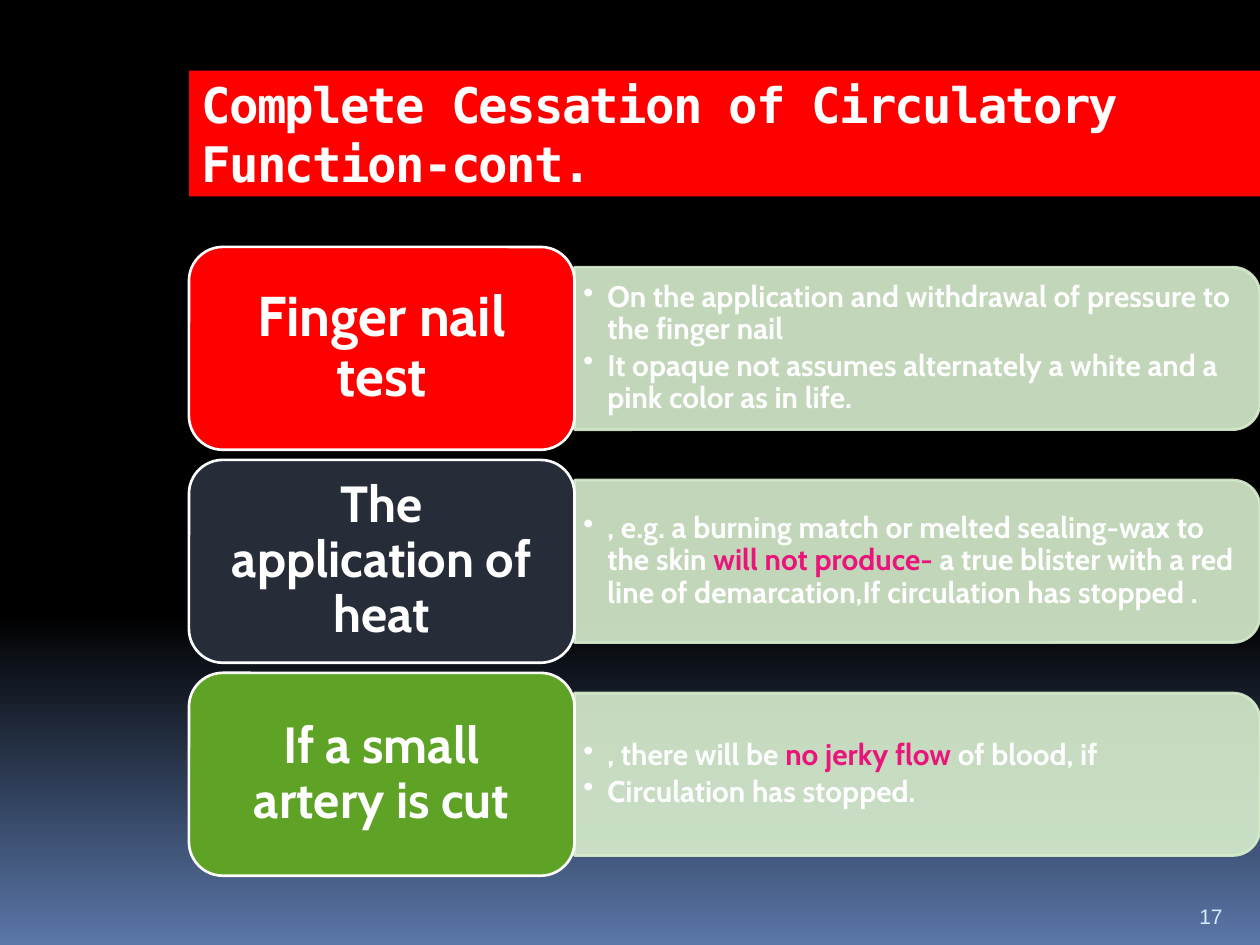
from dataclasses import dataclass

from lxml import etree
from pptx import Presentation
from pptx.dml.color import RGBColor
from pptx.enum import shapes, text
from pptx.oxml.ns import qn
from pptx.util import Inches, Pt


@dataclass(frozen=True)
class Theme:
    black: str = "000000"
    dusk: str = "5A77A9"
    white: str = "FFFFFF"
    red: str = "FF0000"
    slate: str = "272D38"
    green: str = "5FA326"
    mint: str = "D8EECE"
    pink: str = "EA157A"
    ice: str = "D6ECFF"
    title_font: str = "DejaVu Sans Mono"
    body_font: str = "Cabin"
    number_font: str = "Arial"
    title_size: int = 28
    detail_size: int = 17
    number_size: int = 12


@dataclass(frozen=True)
class Phrase:
    words: str
    stressed: bool = False


@dataclass(frozen=True)
class Sign:
    name: str
    color: str
    size: int
    points: tuple[tuple[Phrase, ...], ...]


THEME = Theme()
LEFT, RIGHT = 1.5, 10
CARD_TOP, CARD_WIDTH, CARD_HEIGHT, PITCH = 1.96, 3.06, 1.61, 1.69
BAR_HEIGHT, DETAIL_HEIGHT, DETAIL_WIDTH = 1.29, 1.16, 5.38

SIGNS = (
    Sign("Finger nail test", THEME.red, 32, (
        (Phrase("On the application and withdrawal of pressure to the finger nail"),),
        (Phrase("It opaque not assumes alternately a white and a pink color as in life."),),
    )),
    Sign("The application of heat", THEME.slate, 29, (
        (Phrase(", e.g. a burning match or melted sealing-wax to the skin "),
         Phrase("will not produce- ", True),
         Phrase("a true blister with a red line of demarcation,If circulation has stopped .")),
    )),
    Sign("If a small artery is cut", THEME.green, 29, (
        (Phrase(", there will be "), Phrase("no jerky flow ", True), Phrase("of blood, if")),
        (Phrase("Circulation has stopped."),),
    )),
)


def rgb(color: str) -> RGBColor:
    return RGBColor.from_string(color)


def style(run, font: str, size: int, color: str, bold: bool = True) -> None:
    run.font.name = font
    run.font.size = Pt(size)
    run.font.bold = bold
    run.font.color.rgb = rgb(color)


def set_frame(frame, anchor, across: float, down: float) -> None:
    frame.word_wrap = True
    frame.auto_size = text.MSO_AUTO_SIZE.NONE
    frame.vertical_anchor = anchor
    frame.margin_left = frame.margin_right = Inches(across)
    frame.margin_top = frame.margin_bottom = Inches(down)


def paint(shape, fill: str, line: str) -> None:
    shape.shadow.inherit = False
    shape.fill.solid()
    shape.fill.fore_color.rgb = rgb(fill)
    shape.line.color.rgb = rgb(line)
    shape.line.width = Pt(1.5)


def add_bar(slide, middle: float) -> None:
    length = RIGHT - LEFT - CARD_WIDTH
    center = RIGHT - length / 2
    bar = slide.shapes.add_shape(
        shapes.MSO_SHAPE.ROUND_2_SAME_RECTANGLE,
        Inches(center - BAR_HEIGHT / 2), Inches(middle - length / 2),
        Inches(BAR_HEIGHT), Inches(length))
    bar.rotation = 90
    paint(bar, THEME.mint, THEME.mint)
    for color in bar._element.spPr.iter(qn("a:srgbClr")):
        etree.SubElement(color, qn("a:alpha"), val="90000")


def add_bullet(paragraph) -> None:
    properties = paragraph._p.get_or_add_pPr()
    properties.set("marL", str(Inches(0.19)))
    properties.set("indent", str(-Inches(0.19)))
    etree.SubElement(properties, qn("a:buChar"), char="•")


def add_details(slide, sign: Sign, middle: float) -> None:
    details = slide.shapes.add_textbox(
        Inches(LEFT + CARD_WIDTH), Inches(middle - DETAIL_HEIGHT / 2),
        Inches(DETAIL_WIDTH), Inches(DETAIL_HEIGHT)).text_frame
    set_frame(details, text.MSO_ANCHOR.MIDDLE, 0.07, 0.04)
    for index, phrases in enumerate(sign.points):
        point = details.add_paragraph() if index else details.paragraphs[0]
        point.line_spacing = 0.9
        point.space_after = Pt(THEME.detail_size * 0.15)
        add_bullet(point)
        for phrase in phrases:
            run = point.add_run()
            run.text = phrase.words
            color = THEME.pink if phrase.stressed else THEME.white
            style(run, THEME.body_font, THEME.detail_size, color)


def add_card(slide, sign: Sign, top: float) -> None:
    card = slide.shapes.add_shape(
        shapes.MSO_SHAPE.ROUNDED_RECTANGLE,
        Inches(LEFT), Inches(top), Inches(CARD_WIDTH), Inches(CARD_HEIGHT))
    paint(card, sign.color, THEME.white)
    set_frame(card.text_frame, text.MSO_ANCHOR.MIDDLE, 0.13, 0.07)
    card.text_frame.text = sign.name
    name = card.text_frame.paragraphs[0]
    name.alignment = text.PP_ALIGN.CENTER
    name.line_spacing = 0.9
    name.space_after = Pt(sign.size * 0.35)
    style(name.runs[0], THEME.body_font, sign.size, THEME.white)


def add_title(slide, words: str) -> None:
    title = slide.shapes.title
    title.left, title.top = Inches(LEFT), Inches(0.56)
    title.width, title.height = Inches(RIGHT - LEFT), Inches(1)
    title.fill.solid()
    title.fill.fore_color.rgb = rgb(THEME.red)
    set_frame(title.text_frame, text.MSO_ANCHOR.MIDDLE, 0.1, 0.05)
    title.text_frame.text = words
    heading = title.text_frame.paragraphs[0]
    heading.alignment = text.PP_ALIGN.LEFT
    style(heading.runs[0], THEME.title_font, THEME.title_size, THEME.white)
    heading.runs[0]._r.get_or_add_rPr().set("spc", "-100")


def add_page_number(slide, number: str) -> None:
    page = slide.shapes.add_textbox(
        Inches(9.42), Inches(7.02), Inches(0.5), Inches(0.4)).text_frame
    set_frame(page, text.MSO_ANCHOR.BOTTOM, 0.1, 0.05)
    page.text = number
    style(page.paragraphs[0].runs[0], THEME.number_font, THEME.number_size, THEME.ice, False)


def set_background(slide) -> None:
    fill = slide.background.fill
    fill.gradient()
    fill.gradient_angle = 270
    for stop, position, color in zip(
            fill.gradient_stops, (0.65, 1), (THEME.black, THEME.dusk)):
        stop.position = position
        stop.color.rgb = rgb(color)


def main() -> None:
    deck = Presentation()
    deck.slide_width, deck.slide_height = Inches(10), Inches(7.5)
    slide = deck.slides.add_slide(deck.slide_layouts[5])
    set_background(slide)
    add_title(slide, "Complete Cessation of Circulatory Function-cont.")
    for index, sign in enumerate(SIGNS):
        top = CARD_TOP + index * PITCH
        middle = top + CARD_HEIGHT / 2
        add_bar(slide, middle)
        add_details(slide, sign, middle)
        add_card(slide, sign, top)
    add_page_number(slide, "17")
    deck.save("out.pptx")


if __name__ == "__main__":
    main()
